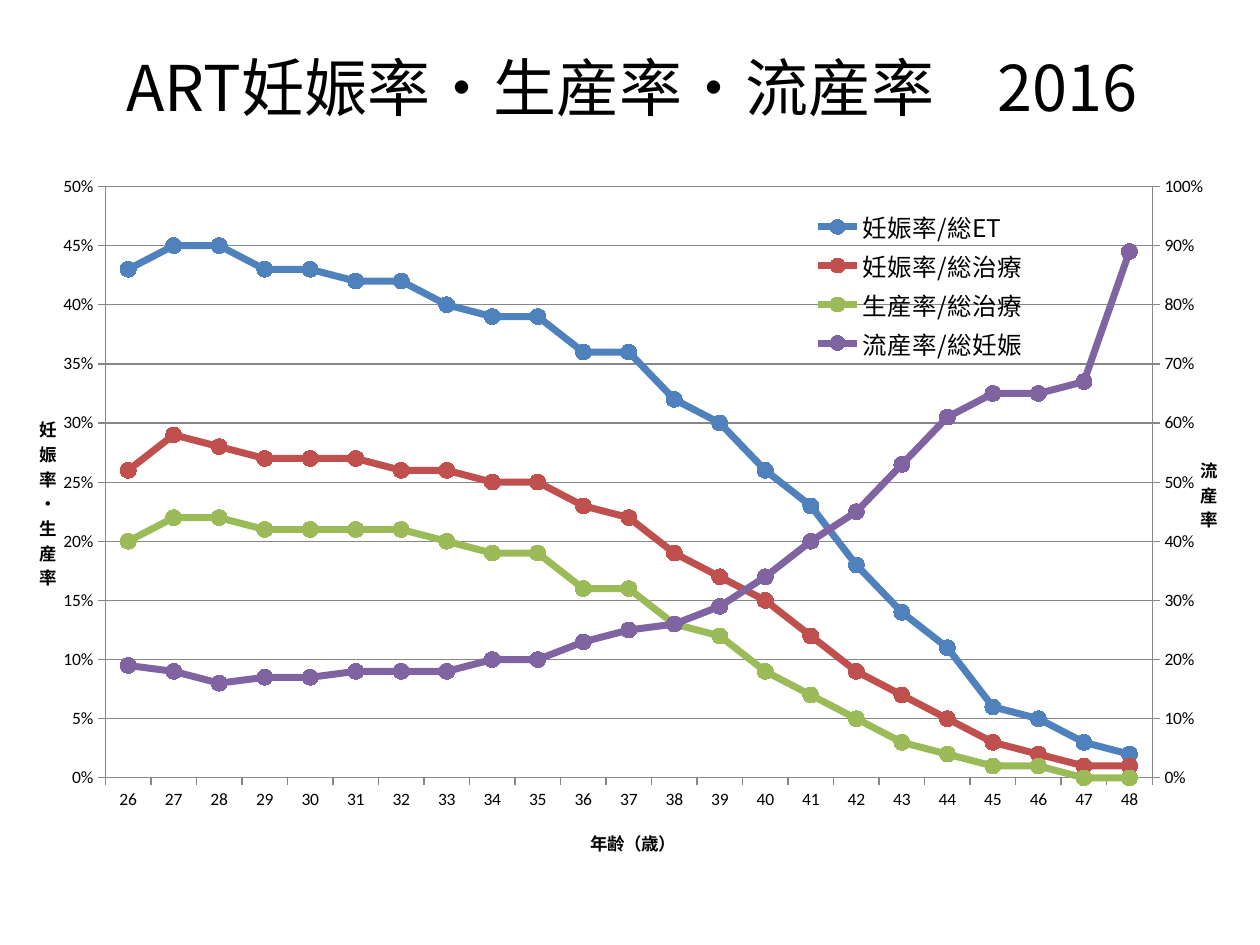
"""Build a slide charting ART pregnancy, birth and miscarriage rates by age."""
from copy import deepcopy

from pptx import Presentation, oxml
from pptx.chart import axis as ax, data as cd
from pptx.dml.color import RGBColor
from pptx.enum import chart as ch, text as tx
from pptx.oxml import ns
from pptx.util import Pt

COLORS = {"text": "000000", "line": "868686"}
FONTS = {"latin": "Calibri", "japanese": "Noto Sans CJK JP"}
AGES = range(26, 49)
SERIES = [
    ("妊娠率/総ET", "4F81BD", [43, 45, 45, 43, 43, 42, 42, 40, 39, 39, 36, 36,
                            32, 30, 26, 23, 18, 14, 11, 6, 5, 3, 2]),
    ("妊娠率/総治療", "C0504D", [26, 29, 28, 27, 27, 27, 26, 26, 25, 25, 23, 22,
                            19, 17, 15, 12, 9, 7, 5, 3, 2, 1, 1]),
    ("生産率/総治療", "9BBB59", [20, 22, 22, 21, 21, 21, 21, 20, 19, 19, 16, 16,
                            13, 12, 9, 7, 5, 3, 2, 1, 1, 0, 0]),
    ("流産率/総妊娠", "8064A2", [19, 18, 16, 17, 17, 18, 18, 18, 20, 20, 23, 25,
                            26, 29, 34, 40, 45, 53, 61, 65, 65, 67, 89]),
]


def rgb(value):
    return RGBColor.from_string(value)


def style_font(font, size, name, bold=False):
    font.size, font.name, font.bold = Pt(size), name, bold
    font.color.rgb = rgb(COLORS["text"])


def set_layout(element, index, inner=False, **percents):
    """Give a chart part a manual layout, in percent of the chart area."""
    for old in element.findall(ns.qn("c:layout")):
        element.remove(old)
    target = '<c:layoutTarget val="inner"/>' if inner else ""
    modes = "".join(f'<c:{key}Mode val="edge"/>' for key in "xy")
    sizes = "".join(f'<c:{key} val="{value / 100:.4f}"/>'
                    for key, value in percents.items())
    element.insert(index, oxml.parse_xml(
        f'<c:layout {ns.nsdecls("c")}><c:manualLayout>{target}{modes}{sizes}'
        "</c:manualLayout></c:layout>"))


def add_title(page, content):
    box = page.shapes.title
    box.left, box.top, box.width, box.height = Pt(37), Pt(16.6), Pt(648), Pt(65.5)
    frame = box.text_frame
    frame.text = content
    frame.vertical_anchor = tx.MSO_ANCHOR.MIDDLE
    para = frame.paragraphs[0]
    para.alignment = tx.PP_ALIGN.CENTER
    style_font(para.font, 36, FONTS["japanese"])


def style_axis(axis):
    axis.major_tick_mark = ch.XL_TICK_MARK.OUTSIDE
    axis.minor_tick_mark = ch.XL_TICK_MARK.NONE
    axis.format.line.color.rgb = rgb(COLORS["line"])
    axis.format.line.width = Pt(0.75)
    style_font(axis.tick_labels.font, 10, FONTS["latin"])


def title_axis(axis, content, x, y, stacked=False):
    frame = axis.axis_title.text_frame
    frame.text = content
    style_font(frame.paragraphs[0].font, 10, FONTS["latin"], bold=True)
    if stacked:
        body = frame._txBody.find(ns.qn("a:bodyPr"))
        body.set("rot", "0")
        body.set("vert", "wordArtVertRtl")
    set_layout(axis.axis_title._element, 1, x=x, y=y)


def scale_axis(axis, maximum):
    axis.minimum_scale, axis.maximum_scale = 0, maximum
    axis.major_unit = maximum / 10
    axis.tick_labels.number_format = "0%"
    axis.tick_labels.number_format_is_linked = False


def style_series(series, color):
    series.smooth = False
    series.format.line.color.rgb = rgb(color)
    series.format.line.width = Pt(4)
    marker = series.marker
    marker.style, marker.size = ch.XL_MARKER_STYLE.CIRCLE, 9
    marker.format.fill.solid()
    marker.format.fill.fore_color.rgb = rgb(color)
    marker.format.line.color.rgb = rgb(color)


def add_right_axis(chart):
    """Move the last series to a second plot and return its value axis."""
    area = chart._chartSpace.chart.plotArea
    left_plot = area.find(ns.qn("c:lineChart"))
    right_plot = deepcopy(left_plot)
    left_plot.remove(left_plot.findall(ns.qn("c:ser"))[-1])
    for series in right_plot.findall(ns.qn("c:ser"))[:-1]:
        right_plot.remove(series)
    left_plot.addnext(right_plot)

    values = chart.value_axis._element
    right_values = deepcopy(values)
    right_ages = deepcopy(chart.category_axis._element)
    values.addnext(right_values)
    right_values.addnext(right_ages)
    renamed = {values.find(ns.qn("c:axId")).get("val"): "50010",
               values.find(ns.qn("c:crossAx")).get("val"): "50020"}
    for part in (right_plot, right_values, right_ages):
        for tag in ("c:axId", "c:crossAx"):
            for node in part.findall(ns.qn(tag)):
                node.set("val", renamed[node.get("val")])
    right_values.find(ns.qn("c:axPos")).set("val", "r")
    right_values.find(ns.qn("c:crosses")).set("val", "max")
    right_ages.find(ns.qn("c:crosses")).set("val", "autoZero")

    hidden = ax.CategoryAxis(right_ages)
    hidden.has_title = False
    hidden.visible = False
    axis = ax.ValueAxis(right_values)
    axis.has_major_gridlines = False
    return axis


def style_legend(chart):
    chart.has_legend = True
    legend = chart.legend
    legend.position = ch.XL_LEGEND_POSITION.RIGHT
    legend.include_in_layout = False
    style_font(legend.font, 14, FONTS["japanese"])
    set_layout(legend._element, 1, x=63.7, y=6.1, w=20, h=23)


def add_rate_chart(page):
    data = cd.CategoryChartData(number_format="0%")
    data.categories = [str(age) for age in AGES]
    for name, _, percents in SERIES:
        data.add_series(name, [percent / 100 for percent in percents])
    chart = page.shapes.add_chart(ch.XL_CHART_TYPE.LINE_MARKERS, Pt(13.7), Pt(93.6),
                                  Pt(694.8), Pt(398.2), data).chart
    chart.has_title = False
    style_font(chart.font, 10, FONTS["latin"])
    chart.plots[0].vary_by_categories = False
    for series, (_, color, _) in zip(chart.plots[0].series, SERIES):
        style_series(series, color)

    ages, rates = chart.category_axis, chart.value_axis
    for axis in (ages, rates):
        style_axis(axis)
    rates.has_major_gridlines = True
    rates.major_gridlines.format.line.color.rgb = rgb(COLORS["line"])
    rates.major_gridlines.format.line.width = Pt(0.75)
    scale_axis(rates, 0.5)
    title_axis(ages, "年齢（歳）", 46.3, 96)
    title_axis(rates, "妊娠率・生産率", 1, 36, stacked=True)

    losses = add_right_axis(chart)
    scale_axis(losses, 1)
    title_axis(losses, "流産率", 96.5, 41.9, stacked=True)
    style_legend(chart)
    set_layout(chart._chartSpace.chart.plotArea, 0, inner=True,
               x=6.7, y=3.3, w=86.1, h=85.8)


def main():
    deck = Presentation()
    deck.slide_width, deck.slide_height = Pt(720), Pt(540)
    page = deck.slides.add_slide(deck.slide_layouts[5])
    add_title(page, "ART妊娠率・生産率・流産率　2016")
    add_rate_chart(page)
    deck.save("out.pptx")


if __name__ == "__main__":
    main()
